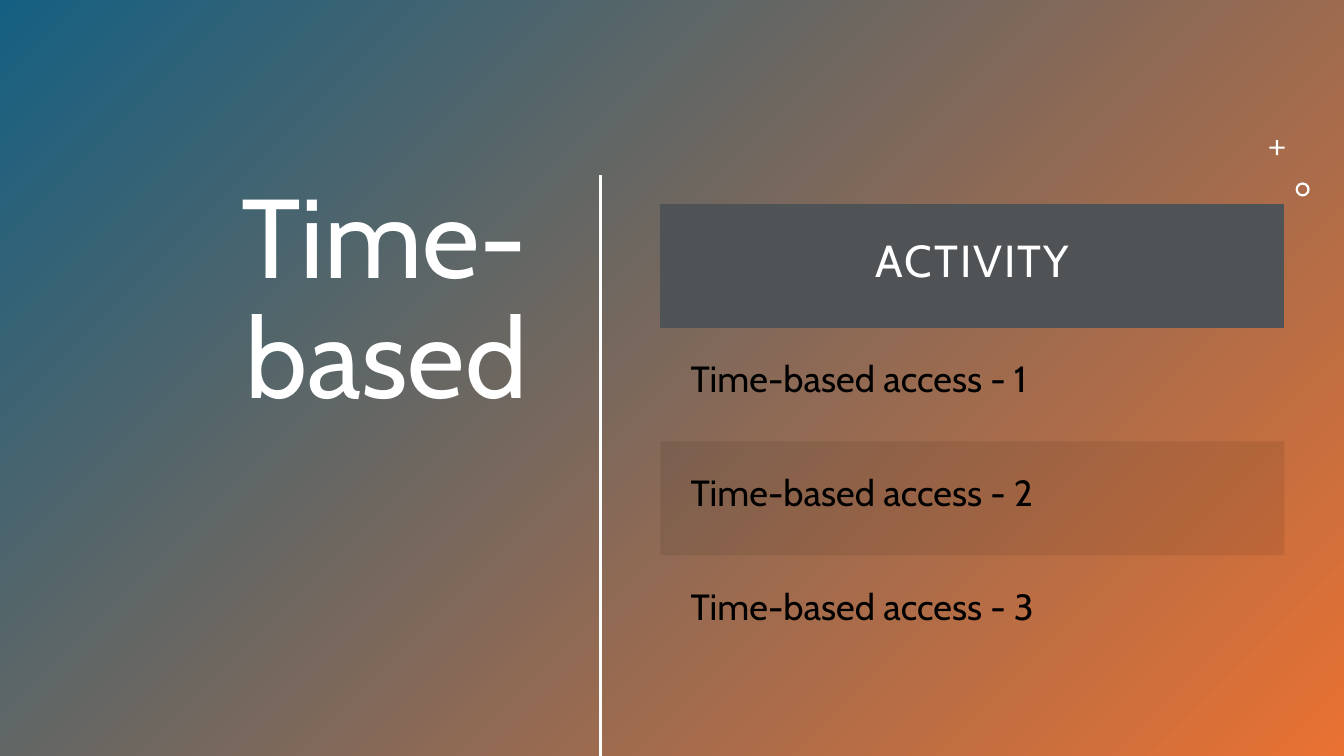
from lxml.etree import SubElement
from pptx import Presentation
from pptx.dml.color import RGBColor
from pptx.enum.shapes import MSO_CONNECTOR, MSO_SHAPE
from pptx.enum.text import MSO_ANCHOR, PP_ALIGN
from pptx.oxml.ns import qn
from pptx.util import Inches, Pt

WIDTH, HEIGHT = 13.33, 7.5
WHITE, BLACK, SLATE = "FFFFFF", "000000", "505356"
BLUE, ORANGE = "156082", "E97132"
NO_GRID_STYLE = "{2D5ABB26-0587-4C30-8999-92F81FD0307C}"


def color(value):
    return RGBColor.from_string(value)


class SlideBuilder:
    """Holds the font and the slide that is being drawn."""

    def __init__(self, page, font="Cabin"):
        self.page = page
        self.font = font

    def format_text(self, frame, size, ink, align, line_spacing=None, tracking=None):
        """Style every run; tracking is letter spacing in points."""
        for para in frame.paragraphs:
            para.alignment = align
            if line_spacing:
                para.line_spacing = line_spacing
            for span in para.runs:
                span.font.name = self.font
                span.font.size = Pt(size)
                span.font.bold = False
                span.font.color.rgb = color(ink)
                if tracking:
                    span.font._element.set("spc", str(int(tracking * 100)))

    def shape(self, kind, left, top, width, height):
        box = self.page.shapes.add_shape(
            kind, Inches(left), Inches(top), Inches(width), Inches(height))
        box.shadow.inherit = False
        box.line.fill.background()
        return box

    def gradient_backdrop(self, start, end):
        fill = self.shape(MSO_SHAPE.RECTANGLE, 0, 0, WIDTH, HEIGHT).fill
        fill.gradient()
        fill.gradient_angle = 315
        for stop, value in zip(fill.gradient_stops, (start, end)):
            stop.color.rgb = color(value)

    def ornament(self, kind, left, top, size, adjustment):
        mark = self.shape(kind, left, top, size, size)
        mark.adjustments[0] = adjustment
        mark.fill.solid()
        mark.fill.fore_color.rgb = color(WHITE)

    def title(self, text, left, top, width, height):
        box = self.page.shapes.add_textbox(
            Inches(left), Inches(top), Inches(width), Inches(height))
        frame = box.text_frame
        frame.word_wrap = True
        frame.vertical_anchor = MSO_ANCHOR.TOP
        frame.text = text
        self.format_text(frame, 80, WHITE, PP_ALIGN.RIGHT, line_spacing=0.9)

    def vertical_line(self, left, top, bottom):
        line = self.page.shapes.add_connector(
            MSO_CONNECTOR.STRAIGHT, Inches(left), Inches(top), Inches(left), Inches(bottom))
        line.line.color.rgb = color(WHITE)
        line.line.width = Pt(2)
        SubElement(line._element.spPr, qn("a:effectLst"))

    def activity_table(self, header, activities, left, top, width, header_height, row_height):
        texts = [header, *activities]
        height = header_height + row_height * len(activities)
        table = self.page.shapes.add_table(
            len(texts), 1, Inches(left), Inches(top), Inches(width), Inches(height)).table
        table._tbl.tblPr.find(qn("a:tableStyleId")).text = NO_GRID_STYLE
        for index, text in enumerate(texts):
            table.rows[index].height = Inches(row_height if index else header_height)
            cell = table.cell(index, 0)
            cell.margin_left = cell.margin_right = Inches(0.3)
            cell.margin_top = cell.margin_bottom = Inches(0.3)
            cell.text_frame.text = text
            if index == 0:
                self.format_text(cell.text_frame, 32, WHITE, PP_ALIGN.CENTER, tracking=1.5)
                self.fill_cell(cell, SLATE)
            else:
                self.format_text(cell.text_frame, 26, BLACK, PP_ALIGN.LEFT)
                if index % 2:
                    cell.fill.background()
                else:
                    self.fill_cell(cell, BLACK, opacity=8)

    def fill_cell(self, cell, value, opacity=100):
        cell.fill.solid()
        cell.fill.fore_color.rgb = color(value)
        if opacity < 100:
            tint = cell._tc.tcPr.find(qn("a:solidFill"))[0]
            SubElement(tint, qn("a:alpha")).set("val", str(opacity * 1000))


def main():
    deck = Presentation()
    deck.slide_width, deck.slide_height = Inches(WIDTH), Inches(HEIGHT)
    builder = SlideBuilder(deck.slides.add_slide(deck.slide_layouts[6]))
    builder.gradient_backdrop(BLUE, ORANGE)
    builder.title("Time-based", 0.5, 1.75, 4.83, 3.97)
    builder.vertical_line(5.96, 1.74, HEIGHT)
    builder.ornament(MSO_SHAPE.CROSS, 12.59, 1.39, 0.15, 0.43)
    builder.ornament(MSO_SHAPE.DONUT, 12.85, 1.81, 0.14, 0.16)
    activities = [f"Time-based access - {number}" for number in range(1, 4)]
    builder.activity_table("ACTIVITY", activities, 6.55, 2.02, 6.19, 1.23, 1.13)
    deck.save("out.pptx")


if __name__ == "__main__":
    main()
